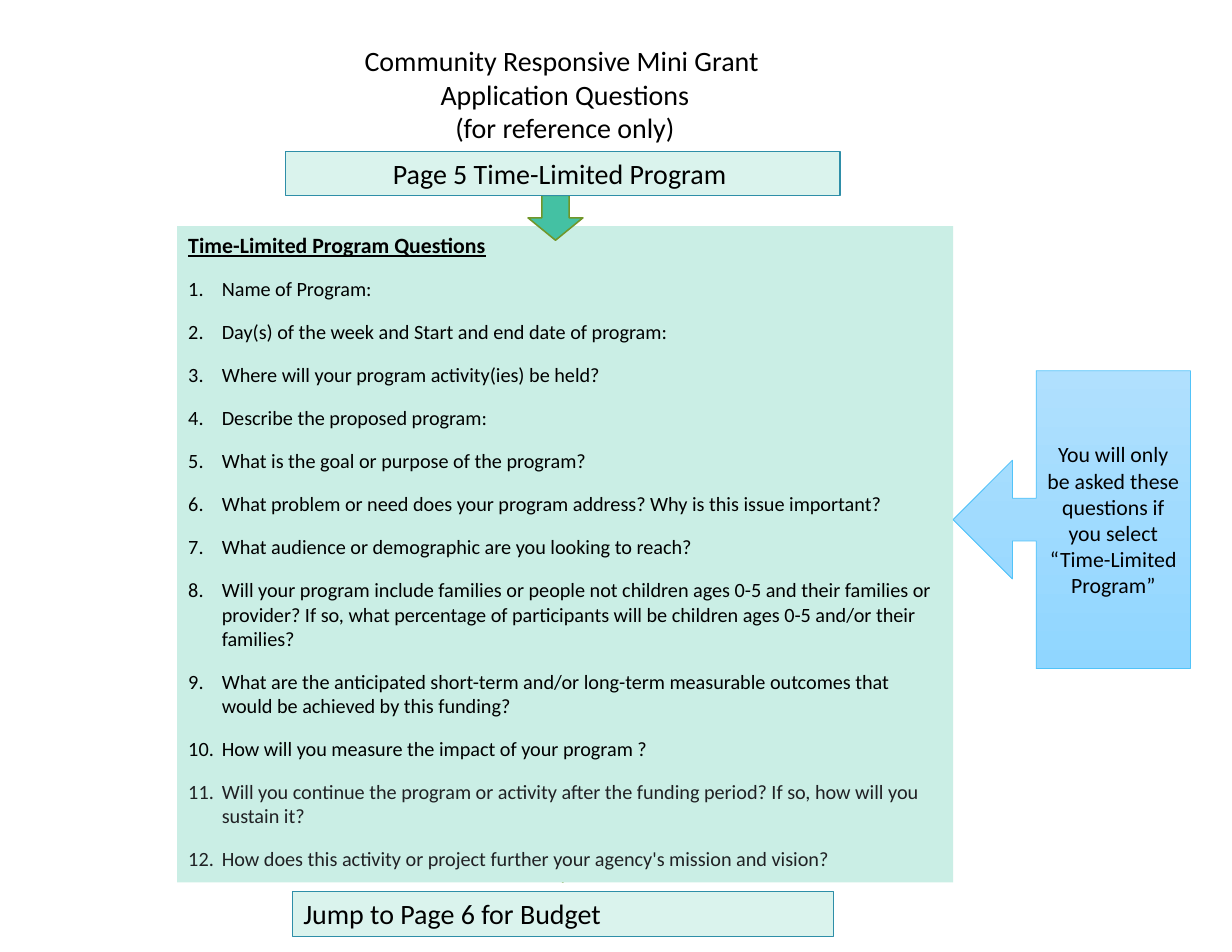
"""Build the time-limited program page of the grant application questions."""
from dataclasses import dataclass
from typing import Optional

from lxml.etree import SubElement
from pptx import Presentation
from pptx.dml.color import RGBColor
from pptx.enum.shapes import MSO_SHAPE as Shape
from pptx.enum.text import MSO_ANCHOR as Anchor, MSO_AUTO_SIZE as AutoSize, PP_ALIGN as Align
from pptx.oxml.ns import qn
from pptx.util import Pt


@dataclass(frozen=True)
class Theme:
    """Font, type sizes and colours of the slide."""
    font: str = "Calibri"
    large: float = 18
    medium: float = 14
    small: float = 13
    text: str = "000000"
    soft_text: str = "202124"
    panel: str = "CAEEE5"
    banner: str = "DAF3ED"
    banner_line: str = "2E8EA8"
    arrow: str = "44C1A3"
    arrow_line: str = "719629"
    note_top: str = "B0E0FE"
    note_bottom: str = "90D6FF"
    note_line: str = "51C3F9"


@dataclass(frozen=True)
class Box:
    """Position and size in points."""
    left: float
    top: float
    width: float
    height: float


@dataclass(frozen=True)
class Banner:
    """Outlined bar with one line of text."""
    box: Box
    text: str
    align: Align


THEME = Theme()
TITLE = ("Community Responsive Mini Grant ", "Application Questions", "(for reference only)")
HEADING = "Time-Limited Program Questions"
QUESTIONS = (
    "Name of Program:",
    "Day(s) of the week and Start and end date of program:",
    "Where will your program activity(ies) be held?",
    "Describe the proposed program:",
    "What is the goal or purpose of the program?",
    "What problem or need does your program address? Why is this issue important?",
    "What audience or demographic are you looking to reach?",
    "Will your program include families or people not children ages 0-5 and their families or "
    "provider? If so, what percentage of participants will be children ages 0-5 and/or their families?",
    "What are the anticipated short-term and/or long-term measurable outcomes that would be "
    "achieved by this funding?",
    "How will you measure the impact of your program ?",
    "Will you continue the program or activity after the funding period? If so, how will you sustain it?",
    "How does this activity or project further your agency's mission and vision?",
)
SOFT_FROM = 10
NOTE = "You will only be asked these questions if you select “Time-Limited Program”"
TITLE_BOX = Box(185, 24.5, 356.4, 72.7)
PANEL_BOX = Box(113.8, 145.4, 499, 421.9)
NOTE_BOX = Box(612.7, 238.3, 152.6, 191.5)
JUMP_ARROW = Box(316.8, 499.7, 90, 44.6)
PAGE_ARROW = Box(342.7, 122.4, 28.8, 35.3)
BANNERS = (
    Banner(Box(183.6, 97.2, 356.4, 28.8), "Page 5 Time-Limited Program ", Align.CENTER),
    Banner(Box(187.9, 573.1, 347.8, 28.8), "Jump to Page 6 for Budget", Align.LEFT),
)


def place(s, box: Box) -> None:
    """Move and size a shape."""
    s.left, s.top = Pt(box.left), Pt(box.top)
    s.width, s.height = Pt(box.width), Pt(box.height)


def fill_solid(s, color: str) -> None:
    """Give a shape a plain fill."""
    s.fill.solid()
    s.fill.fore_color.rgb = RGBColor.from_string(color)


def add_shape(slide, kind: Shape, box: Box, line: str, weight: float):
    """Add an outlined shape without shadow."""
    s = slide.shapes.add_shape(kind, Pt(box.left), Pt(box.top), Pt(box.width), Pt(box.height))
    s.shadow.inherit = False
    s.line.color.rgb = RGBColor.from_string(line)
    s.line.width = Pt(weight)
    return s


def write(s, lines: tuple, size: float, align: Align, anchor: Anchor, gap: float = 0) -> None:
    """Write one paragraph per line with shared formatting."""
    tf = s.text_frame
    tf.word_wrap, tf.auto_size, tf.vertical_anchor = True, AutoSize.NONE, anchor
    tf.text = "\n".join(lines)
    for p in tf.paragraphs:
        p.alignment = align
        p.space_before = p.space_after = Pt(gap)
        style(p, size, THEME.text)


def style(p, size: float, color: str) -> None:
    """Set the font of every run in a paragraph."""
    for r in p.runs:
        r.font.name, r.font.size = THEME.font, Pt(size)
        r.font.color.rgb = RGBColor.from_string(color)


def set_bullet(p, indent: float, numbering: Optional[str] = None) -> None:
    """Number a paragraph with a hanging indent, or clear its bullet."""
    pPr = p._p.get_or_add_pPr()
    pPr.set("marL", str(Pt(indent)))
    pPr.set("indent", str(-Pt(indent)))
    if numbering:
        SubElement(pPr, qn("a:buFont"), typeface="+mj-lt")
        SubElement(pPr, qn("a:buAutoNum"), type=numbering)
    else:
        SubElement(pPr, qn("a:buNone"))


def add_down_arrow(slide, box: Box) -> None:
    """Add a right arrow turned to point down."""
    s = add_shape(slide, Shape.RIGHT_ARROW, box, THEME.arrow_line, 1)
    s.rotation = 90
    fill_solid(s, THEME.arrow)


def add_banner(slide, banner: Banner) -> None:
    """Add a page banner."""
    s = add_shape(slide, Shape.RECTANGLE, banner.box, THEME.banner_line, 0.75)
    fill_solid(s, THEME.banner)
    write(s, (banner.text,), THEME.large, banner.align, Anchor.TOP, 6)


def add_note(slide) -> None:
    """Add the callout that points at the questions."""
    s = add_shape(slide, Shape.LEFT_ARROW_CALLOUT, NOTE_BOX, THEME.note_line, 0.5)
    for i, value in enumerate((0.18, 0.25, 0.25, 0.65)):
        s.adjustments[i] = value
    s.fill.gradient()
    s.fill.gradient_angle = 270
    stops = zip(s.fill.gradient_stops, (THEME.note_top, THEME.note_bottom))
    for position, (stop, color) in enumerate(stops):
        stop.color.rgb = RGBColor.from_string(color)
        stop.position = position
    write(s, (NOTE,), THEME.medium, Align.CENTER, Anchor.MIDDLE)


def fill_questions(body) -> None:
    """Fill the body with the heading and the numbered questions."""
    place(body, PANEL_BOX)
    fill_solid(body, THEME.panel)
    write(body, (HEADING, *QUESTIONS), THEME.small, Align.LEFT, Anchor.TOP, 6)
    heading, *questions = body.text_frame.paragraphs
    style(heading, THEME.medium, THEME.text)
    heading.runs[0].font.bold = heading.runs[0].font.underline = True
    set_bullet(heading, 0)
    for p in questions:
        set_bullet(p, 21.6, "arabicPeriod")
    for p in questions[SOFT_FROM:]:
        style(p, THEME.small, THEME.soft_text)


def main() -> None:
    """Build and save the slide."""
    prs = Presentation()
    prs.slide_width, prs.slide_height = Pt(792), Pt(612)
    slide = prs.slides.add_slide(prs.slide_layouts[1])
    title, body = slide.placeholders
    add_down_arrow(slide, JUMP_ARROW)
    for s in (body, title):
        slide.shapes._spTree.append(s._element)
    fill_questions(body)
    place(title, TITLE_BOX)
    write(title, TITLE, THEME.large, Align.CENTER, Anchor.TOP)
    add_down_arrow(slide, PAGE_ARROW)
    for banner in BANNERS:
        add_banner(slide, banner)
    add_note(slide)
    prs.save("out.pptx")


if __name__ == "__main__":
    main()
